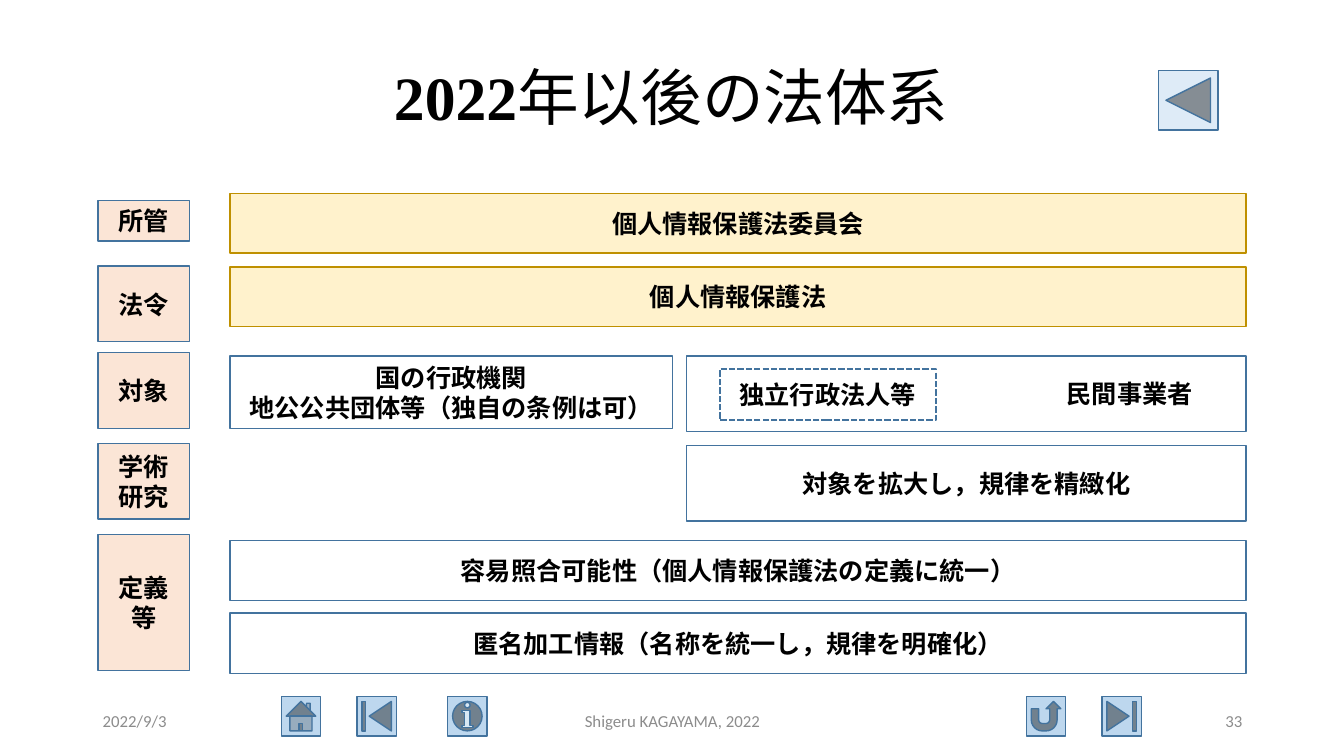
from pptx import Presentation
from pptx.dml.color import RGBColor
from pptx.enum import dml, shapes, text
from pptx.util import Pt

PX = 9144  # EMU in one px, 100 px to the inch
THEME = {
    "blue": "43739E", "gold": "BF9000", "cream": "FFF2CC", "peach": "FBE5D6",
    "sky": "BDD7EE", "pale": "DEEBF7", "ink": "000000", "grey": "8C8C8C",
    "face": "Calibri", "serif": "Times New Roman",
    "head": 44, "body": 18, "foot": 12, "rule": 1, "dash": 1.5,
}
KIND = shapes.MSO_SHAPE
ALIGN = text.PP_ALIGN


def write(frame, words, size="body", tint="ink", bold=True, align=ALIGN.CENTER):
    """Fill a frame with text, one paragraph for each line of words."""
    look = {"word_wrap": True, "auto_size": text.MSO_AUTO_SIZE.NONE,
            "vertical_anchor": text.MSO_ANCHOR.MIDDLE}
    for key, value in look.items():
        setattr(frame, key, value)
    frame.text = words
    for para in frame.paragraphs:
        para.alignment = align
        for run in para.runs:
            style = {"name": THEME["face"], "size": Pt(THEME[size]), "bold": bold}
            for key, value in style.items():
                setattr(run.font, key, value)
            run.font.color.rgb = RGBColor.from_string(THEME[tint])


def draw(kind, spot, fill=None, line="blue", words=""):
    """Add a flat outlined shape at spot (left, top, width, height)."""
    shape = slide.shapes.add_shape(kind, *(n * PX for n in spot))
    shape.shadow.inherit = False
    if fill:
        shape.fill.solid()
        shape.fill.fore_color.rgb = RGBColor.from_string(THEME[fill])
    else:
        shape.fill.background()
    shape.line.color.rgb = RGBColor.from_string(THEME[line])
    shape.line.width = Pt(THEME["rule"])
    if words:
        write(shape.text_frame, words)
    return shape


deck = Presentation()
deck.slide_width, deck.slide_height = 1333 * PX, 750 * PX
slide = deck.slides.add_slide(deck.slide_layouts[5])

# Title
title = slide.shapes.title
place = {"left": 191, "top": 27, "width": 950, "height": 145}
for key, value in place.items():
    setattr(title, key, value * PX)
write(title.text_frame, "", "head")
para = title.text_frame.paragraphs[0]
para.line_spacing = 0.9
for words, face, bold in [("2022", "serif", True), ("年以後の法体系", "face", False)]:
    run = para.add_run()
    run.text = words
    style = {"name": THEME[face], "size": Pt(THEME["head"]), "bold": bold}
    for key, value in style.items():
        setattr(run.font, key, value)
    run.font.color.rgb = RGBColor.from_string(THEME["ink"])

# Action buttons
buttons = [
    (KIND.ACTION_BUTTON_HOME, 279),
    (KIND.ACTION_BUTTON_BEGINNING, 354),
    (KIND.ACTION_BUTTON_INFORMATION, 444),
    (KIND.ACTION_BUTTON_RETURN, 1018),
    (KIND.ACTION_BUTTON_END, 1093),
]
for kind, left in buttons:
    draw(kind, (left, 691, 39, 39), "sky")
draw(KIND.ACTION_BUTTON_BACK_OR_PREVIOUS, (1149, 70, 59, 59), "pale")

# Row labels
labels = [
    ("所管", 199, 40),
    ("法令", 264, 75),
    ("対象", 350, 75),
    ("学術\v研究", 440, 75),
    ("定義等", 530, 135),
]
for words, top, height in labels:
    draw(KIND.RECTANGLE, (97, top, 91, height), "peach", words=words)

# Full-width bars
bars = [
    ("個人情報保護法委員会", 192, 59, "cream", "gold"),
    ("個人情報保護法", 265, 59, "cream", "gold"),
    ("容易照合可能性（個人情報保護法の定義に統一）", 536, 60, None, "blue"),
    ("匿名加工情報（名称を統一し，規律を明確化）", 608, 60, None, "blue"),
]
for words, top, height, fill, line in bars:
    draw(KIND.RECTANGLE, (228, top, 1008, height), fill, line, words)

# Public and private sectors
draw(KIND.RECTANGLE, (228, 353, 439, 72),
     words="国の行政機関\n地公公共団体等（独自の条例は可）")
firms = draw(KIND.RECTANGLE, (681, 353, 555, 75), words="民間事業者")
firms.text_frame.paragraphs[0].alignment = ALIGN.RIGHT
firms.text_frame.margin_right = 53 * PX
agency = draw(KIND.RECTANGLE, (714, 366, 214, 51), words="独立行政法人等")
agency.line.width = Pt(THEME["dash"])
agency.line.dash_style = dml.MSO_LINE.SQUARE_DOT
draw(KIND.RECTANGLE, (681, 442, 555, 75), words="対象を拡大し，規律を精緻化")

# Footer
notes = [
    ("2022/9/3", 92, 300, ALIGN.LEFT),
    ("Shigeru KAGAYAMA, 2022", 442, 450, ALIGN.CENTER),
    ("33", 942, 300, ALIGN.RIGHT),
]
for words, left, width, align in notes:
    box = slide.shapes.add_textbox(left * PX, 695 * PX, width * PX, 40 * PX)
    write(box.text_frame, words, "foot", "grey", False, align)

deck.save("out.pptx")
